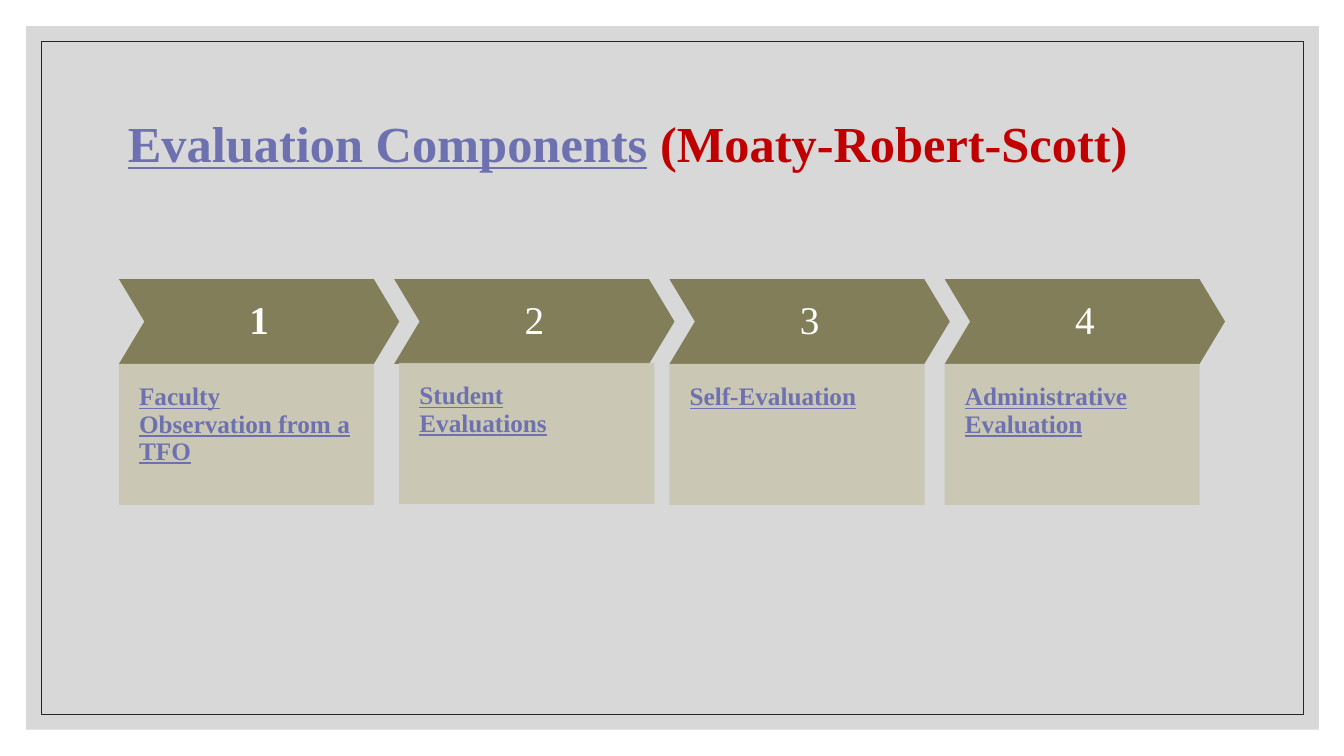
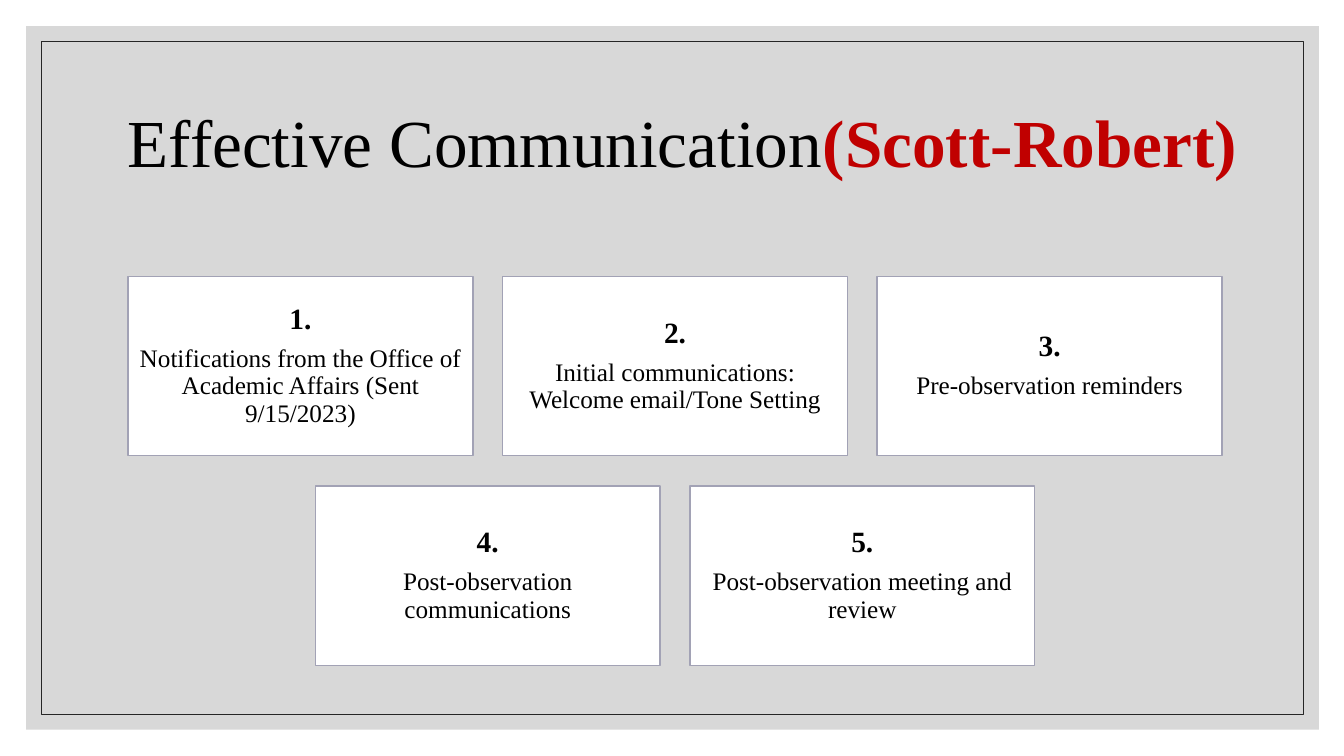
from lxml.etree import SubElement
from pptx import Presentation
from pptx.dml.color import RGBColor
from pptx.enum.shapes import MSO_SHAPE
from pptx.enum.text import MSO_ANCHOR, PP_ALIGN
from pptx.oxml.ns import qn
from pptx.util import Inches, Pt

GRID_UNIT = Inches(0.1)
FONT = "Times New Roman"
WHITE = RGBColor(0xFF, 0xFF, 0xFF)
BLACK = RGBColor(0x00, 0x00, 0x00)
PANEL_GRAY = RGBColor(0xBF, 0xBF, 0xBF)
FRAME_GRAY = RGBColor(0x26, 0x26, 0x26)
LINK_VIOLET = RGBColor(0x6D, 0x71, 0xB0)
PRESENTER_RED = RGBColor(0xC0, 0x00, 0x00)
OLIVE = RGBColor(0x81, 0x7E, 0x59)
SAND = RGBColor(0xC9, 0xC7, 0xB1)
CARD_LINE = RGBColor(0xA2, 0xA2, 0xB5)


def grid(*units):
    return [round(unit * GRID_UNIT) for unit in units]


def write(para, text, size=18, color=BLACK, bold=False, underline=False):
    span = para.add_run()
    span.text = text
    font = span.font
    font.name, font.size, font.bold, font.underline = FONT, Pt(size), bold, underline
    font.color.rgb = color


class Board:
    def __init__(self):
        self.deck = Presentation()
        self.deck.slide_width = Inches(13.33)
        self.deck.slide_height = Inches(7.5)
        self.page = None

    def add_page(self):
        self.page = self.deck.slides.add_slide(self.deck.slide_layouts[6])
        self.box(2.6, 2.6, 128.2, 69.8, fill=PANEL_GRAY, opacity=60)
        self.box(4.1, 4.1, 125.2, 66.8, line=FRAME_GRAY, line_width=0.5)

    def box(self, column, row, columns, rows, kind=MSO_SHAPE.RECTANGLE,
            fill=None, opacity=100, line=None, line_width=1):
        box = self.page.shapes.add_shape(kind, *grid(column, row, columns, rows))
        box.shadow.inherit = False
        if fill is None:
            box.fill.background()
        else:
            box.fill.solid()
            box.fill.fore_color.rgb = fill
        if opacity < 100:
            color = box.fill._xPr.find(qn("a:solidFill"))[0]
            SubElement(color, qn("a:alpha"), val=str(opacity * 1000))
        if line is None:
            box.line.fill.background()
        else:
            box.line.color.rgb = line
            box.line.width = Pt(line_width)
        return box

    def fill_text(self, box, paragraphs, insets=(1, 0.5, 1, 0.5),
                  align=PP_ALIGN.LEFT, anchor=MSO_ANCHOR.MIDDLE, after=0):
        frame = box.text_frame
        frame.word_wrap = True
        frame.vertical_anchor = anchor
        (frame.margin_left, frame.margin_top,
         frame.margin_right, frame.margin_bottom) = grid(*insets)
        for index, spans in enumerate(paragraphs):
            para = frame.add_paragraph() if index else frame.paragraphs[0]
            para.alignment = align
            para.line_spacing = 0.9
            para.space_after = Pt(after)
            for text, style in spans:
                write(para, text, **style)

    def title(self, columns, *spans):
        box = self.page.shapes.add_textbox(*grid(11.7, 7, columns, 15))
        self.fill_text(box, [spans])

    def step(self, column, number, label, bold, shift):
        chevron = self.box(column, 27.7, 27.8, 8.4, MSO_SHAPE.CHEVRON, fill=OLIVE)
        chevron.adjustments[0] = 0.3
        self.fill_text(chevron, [[(number, dict(size=28, color=WHITE, bold=bold))]],
                       insets=(1, 1, 1, 1), align=PP_ALIGN.CENTER)
        right, down = shift
        panel = self.box(column + right, 36.1 + down, 25.3, 14, fill=SAND, opacity=90)
        self.fill_text(panel, [[(label, dict(color=LINK_VIOLET, bold=True, underline=True))]],
                       insets=(2, 2, 2, 4), anchor=MSO_ANCHOR.TOP)

    def card(self, column, row, number, label):
        card = self.box(column, row, 34.2, 17.8, fill=WHITE, line=CARD_LINE)
        self.fill_text(card, [[(f"{number}.", dict(size=21, bold=True))], [(label, {})]],
                       insets=(0.8, 0.9, 0.8, 0.9), align=PP_ALIGN.CENTER, after=7)


def components_page(board):
    board.add_page()
    board.title(110,
                ("Evaluation Components",
                 dict(size=36, color=LINK_VIOLET, bold=True, underline=True)),
                (" (Moaty-Robert-Scott)", dict(size=36, color=PRESENTER_RED, bold=True)))
    steps = [
        ("Faculty Observation from a TFO", True, (0, 0)),
        ("Student Evaluations", False, (0.5, -0.1)),
        ("Self-Evaluation", False, (0, 0)),
        ("Administrative Evaluation", False, (0, 0)),
    ]
    for index, (label, bold, shift) in enumerate(steps):
        board.step(11.8 + 27.3 * index, str(index + 1), label, bold, shift)


def communication_page(board):
    board.add_page()
    board.title(118.3,
                ("Effective Communication", dict(size=48)),
                ("(Scott-Robert)", dict(size=48, color=PRESENTER_RED, bold=True)))
    labels = [
        "Notifications from the Office of Academic Affairs (Sent 9/15/2023)",
        "Initial communications: Welcome email/Tone Setting",
        "Pre-observation reminders",
        "Post-observation communications",
        "Post-observation meeting and review",
    ]
    per_row, column_step, row_step = 3, 37.15, 20.8
    for index, label in enumerate(labels):
        row, place = divmod(index, per_row)
        missing = per_row - min(per_row, len(labels) - row * per_row)
        column = 12.7 + (place + missing / 2) * column_step
        board.card(column, 27.4 + row * row_step, index + 1, label)


def main():
    board = Board()
    components_page(board)
    communication_page(board)
    board.deck.save("out.pptx")


if __name__ == "__main__":
    main()
